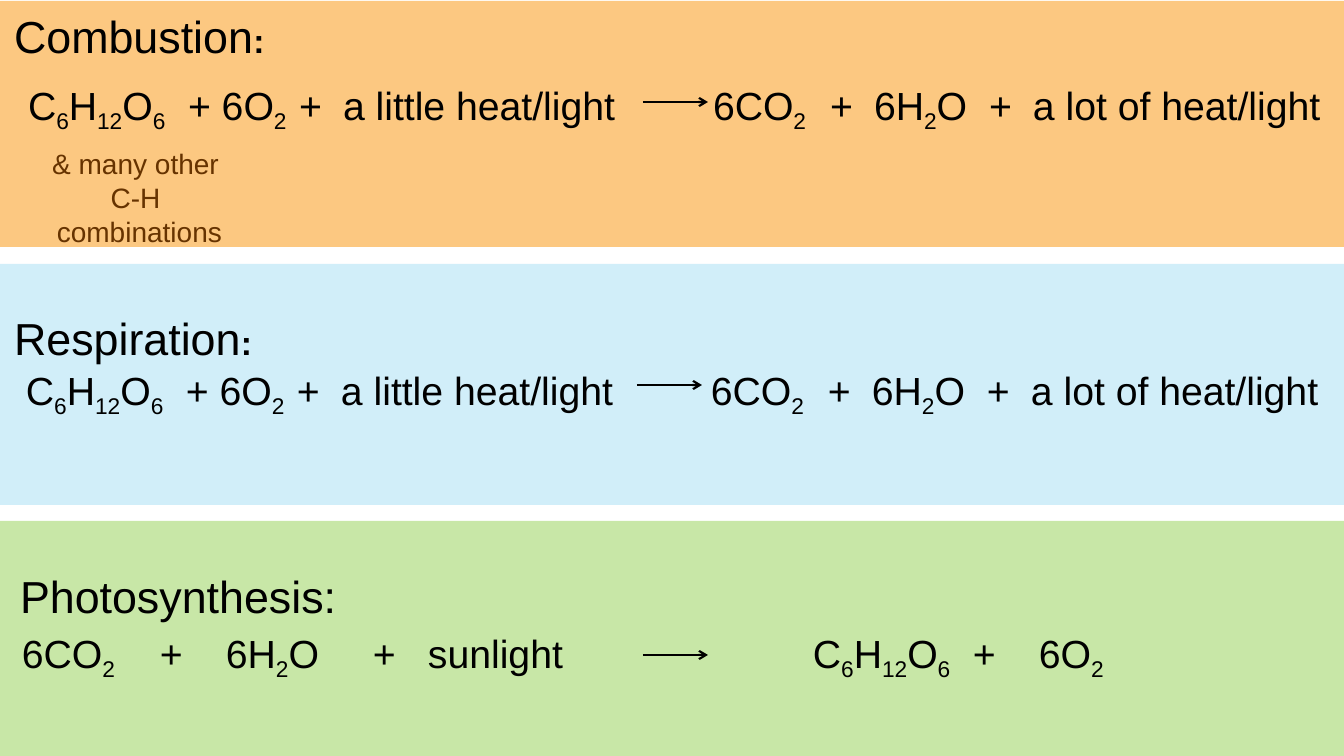
import dataclasses
import typing

import lxml.etree
import pptx
import pptx.dml.color
import pptx.enum.shapes
import pptx.enum.text
import pptx.oxml.ns
import pptx.util

RGBColor = pptx.dml.color.RGBColor
BLACK = RGBColor(0x00, 0x00, 0x00)
BROWN = RGBColor(0x66, 0x33, 0x00)
ORANGE = RGBColor(0xFB, 0x92, 0x05)
BLUE = RGBColor(0xA4, 0xDE, 0xF4)
GREEN = RGBColor(0x92, 0xD0, 0x50)

SLIDE_W, SLIDE_H = 1344, 756
EMU_PER_PX = 12192000 / SLIDE_W
BAND_W = 1355
ARROW_W = 65

BURNING = "C6H12O6\t+ 6O2\t+\ta little heat/light\t6CO2\t+\t6H2O\t+\ta lot of heat/light"
BURNING_TABS = (160, 271, 315, 685, 802, 846, 961, 1005)
GROWING = "6CO2\t+\t6H2O\t+\tsunlight\tC6H12O6\t+\t6O2"
GROWING_TABS = (138, 204, 351, 406, 791, 951, 1017)

TITLE_FONT = {"name": "Arial", "size": pptx.util.Pt(32)}
COLON_FONT = {"name": "Arial", "size": pptx.util.Pt(24), "bold": True}
EQUATION_FONT = {"name": "Arial", "size": pptx.util.Pt(28)}
NOTE_FONT = {"name": "Arial", "size": pptx.util.Pt(20)}


@dataclasses.dataclass(frozen=True)
class Reaction:
    """One coloured band with its title, equation and arrow, in px."""

    color: RGBColor
    band: tuple[int, int, int]
    title: str
    colon: str
    title_at: tuple[int, int]
    equation: str
    tabs: tuple[int, ...]
    equation_at: tuple[int, int]
    arrow_at: tuple[int, int]


REACTIONS = (
    Reaction(GREEN, (-3, 521, 236), "Photosynthesis:", "", (20, 569),
             GROWING, GROWING_TABS, (22, 629), (643, 655)),
    Reaction(BLUE, (-10, 264, 241), "Respiration", ":", (14, 311),
             BURNING, BURNING_TABS, (26, 366), (637, 385)),
    Reaction(ORANGE, (-8, 1, 246), "Combustion", ":", (14, 9),
             BURNING, BURNING_TABS, (28, 81), (643, 102)),
)


def px(n: int) -> int:
    """Turn px into EMU."""
    return round(n * EMU_PER_PX)


def add_element(parent: typing.Any, tag: str, **attributes: str) -> typing.Any:
    """Append a DrawingML element."""
    return lxml.etree.SubElement(parent, pptx.oxml.ns.qn(tag), attributes)


def add_text_frame(s: typing.Any, x: int, y: int, w: int, h: int) -> typing.Any:
    """Add a wrapping text box without margins and return its frame."""
    tf = s.shapes.add_textbox(px(x), px(y), px(w), px(h)).text_frame
    settings = {"word_wrap": True, "margin_left": 0, "margin_right": 0,
                "margin_top": 0, "margin_bottom": 0,
                "auto_size": pptx.enum.text.MSO_AUTO_SIZE.SHAPE_TO_FIT_TEXT}
    for name, value in settings.items():
        setattr(tf, name, value)
    return tf


def add_run(p: typing.Any, text: str, font: dict[str, typing.Any],
            color: RGBColor = BLACK) -> typing.Any:
    """Add a formatted run to a paragraph."""
    r = p.add_run()
    r.text = text
    for name, value in font.items():
        setattr(r.font, name, value)
    r.font.color.rgb = color
    return r


def split_subscripts(formula: str) -> list[tuple[str, bool]]:
    """Split a formula into parts, lowering digits that follow a letter."""
    parts: list[tuple[str, bool]] = []
    previous, lowered = "", False
    for char in formula:
        lowered = char.isdigit() and (previous.isalpha() or lowered)
        if parts and parts[-1][1] == lowered:
            parts[-1] = (parts[-1][0] + char, lowered)
        else:
            parts.append((char, lowered))
        previous = char
    return parts


def add_band(s: typing.Any, reaction: Reaction) -> None:
    """Draw the half-transparent band."""
    x, y, h = reaction.band
    sp = s.shapes.add_shape(pptx.enum.shapes.MSO_SHAPE.RECTANGLE,
                            px(x), px(y), px(BAND_W), px(h))
    sp.shadow.inherit = False
    sp.fill.solid()
    sp.fill.fore_color.rgb = reaction.color
    sp.line.fill.background()
    color = sp.fill._xPr.find(".//" + pptx.oxml.ns.qn("a:srgbClr"))
    add_element(color, "a:alpha", val="50000")


def add_title(s: typing.Any, reaction: Reaction) -> None:
    """Write the title of a reaction."""
    p = add_text_frame(s, *reaction.title_at, 330, 54).paragraphs[0]
    add_run(p, reaction.title, TITLE_FONT)
    if reaction.colon:
        add_run(p, reaction.colon, COLON_FONT)


def add_equation(s: typing.Any, reaction: Reaction) -> None:
    """Write an equation with its terms on tab stops."""
    x, y = reaction.equation_at
    p = add_text_frame(s, x, y, SLIDE_W - x, 47).paragraphs[0]
    tab_list = add_element(p._p.get_or_add_pPr(), "a:tabLst")
    for tab in reaction.tabs:
        add_element(tab_list, "a:tab", pos=str(px(tab)), algn="l")
    for text, lowered in split_subscripts(reaction.equation):
        r = add_run(p, text, EQUATION_FONT)
        if lowered:
            r.font._rPr.set("baseline", "-25000")


def add_arrow(s: typing.Any, x: int, y: int) -> None:
    """Draw a reaction arrow."""
    c = s.shapes.add_connector(pptx.enum.shapes.MSO_CONNECTOR.STRAIGHT,
                               px(x), px(y), px(x + ARROW_W), px(y))
    c.line.color.rgb = BLACK
    c.line.width = pptx.util.Pt(1.5)
    add_element(c.line._get_or_add_ln(), "a:tailEnd", type="arrow")
    add_element(c._element.spPr, "a:effectLst")


def add_note(s: typing.Any) -> None:
    """Write the note under the combustion equation."""
    tf = add_text_frame(s, -8, 147, 295, 102)
    for i, text in enumerate(("& many other ", "C-H ", "combinations")):
        p = tf.add_paragraph() if i else tf.paragraphs[0]
        p.alignment = pptx.enum.text.PP_ALIGN.CENTER
        add_run(p, text, NOTE_FONT, BROWN)


def main() -> None:
    """Build the slide and save it."""
    prs = pptx.Presentation()
    prs.slide_width, prs.slide_height = px(SLIDE_W), px(SLIDE_H)
    s = prs.slides.add_slide(prs.slide_layouts[6])
    for reaction in REACTIONS:
        add_band(s, reaction)
        add_title(s, reaction)
        add_equation(s, reaction)
        add_arrow(s, *reaction.arrow_at)
    add_note(s)
    prs.save("out.pptx")


if __name__ == "__main__":
    main()
